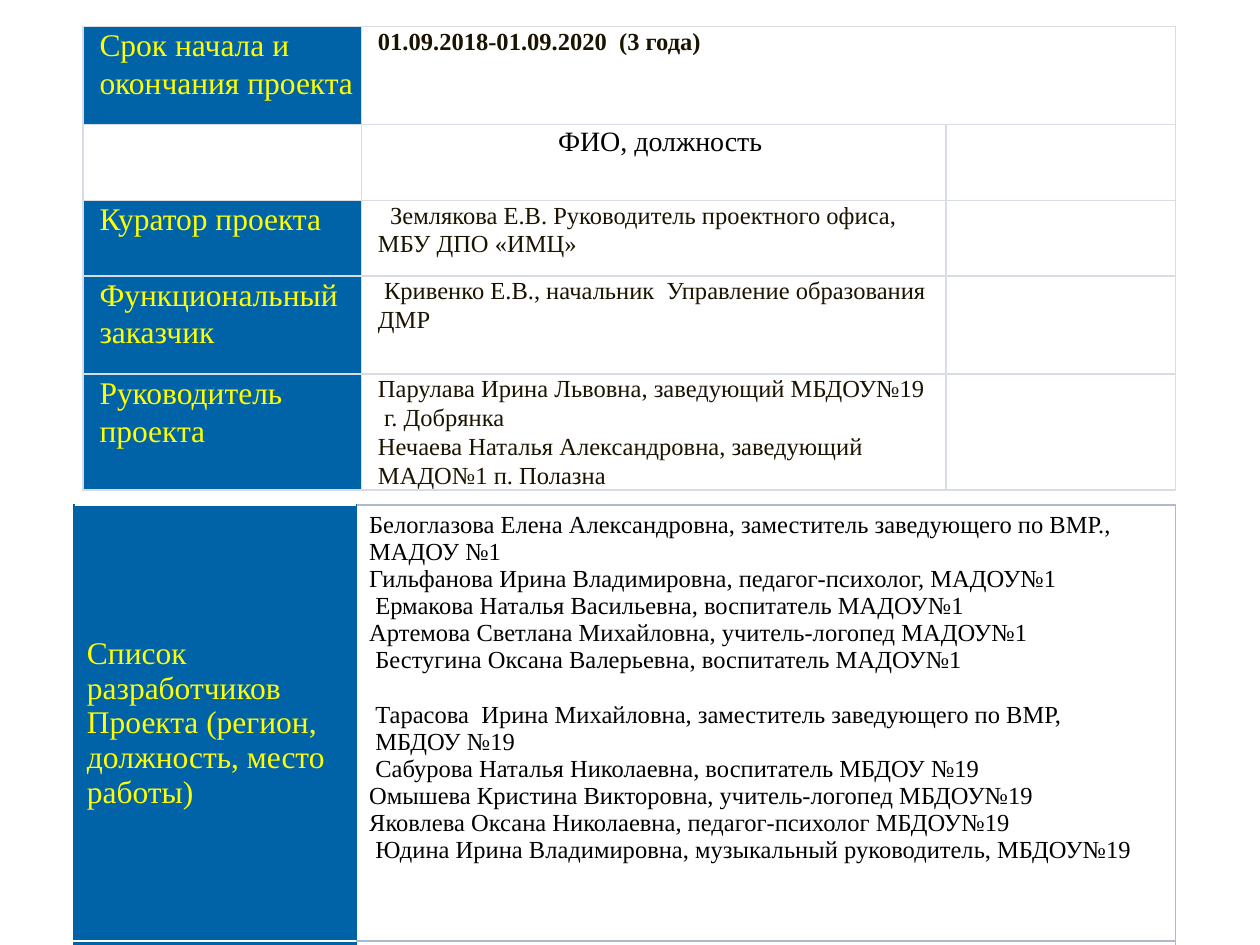
"""Build a slide with a project passport table and a list of its developers."""
import pptx
import pptx.dml.color
import pptx.enum.text
import pptx.oxml
import pptx.oxml.ns
import pptx.util

Inches = pptx.util.Inches
FONT = "Times New Roman"
COLORS = {"blue": "0062A7", "yellow": "FFFF00", "white": "FFFFFF", "black": "000000",
          "dark": "1A1300", "grid": "D8DCE5", "line": "B0B9CB"}

PASSPORT = [
    ("Срок начала и окончания проекта", ["01.09.2018-01.09.2020  (3 года)"]),
    ("", ["ФИО, должность"]),
    ("Куратор проекта", ["  Землякова Е.В. Руководитель проектного офиса,", "МБУ ДПО «ИМЦ»"]),
    ("Функциональный заказчик", [" Кривенко Е.В., начальник  Управление образования ДМР"]),
    ("Руководитель проекта", ["Парулава Ирина Львовна, заведующий МБДОУ№19", " г. Добрянка",
                              "Нечаева Наталья Александровна, заведующий МАДО№1 п. Полазна"]),
]
TEAM_LABEL = ["Список разработчиков", "Проекта (регион,  должность, место работы)"]
TEAMS = [
    ["Белоглазова Елена Александровна, заместитель заведующего по ВМР., МАДОУ №1",
     "Гильфанова Ирина Владимировна, педагог-психолог, МАДОУ№1",
     " Ермакова Наталья Васильевна, воспитатель МАДОУ№1",
     "Артемова Светлана Михайловна, учитель-логопед МАДОУ№1",
     " Бестугина Оксана Валерьевна, воспитатель МАДОУ№1"],
    [" Тарасова  Ирина Михайловна, заместитель заведующего по ВМР,",
     " МБДОУ №19",
     " Сабурова Наталья Николаевна, воспитатель МБДОУ №19",
     "Омышева Кристина Викторовна, учитель-логопед МБДОУ№19",
     "Яковлева Оксана Николаевна, педагог-психолог МБДОУ№19",
     " Юдина Ирина Владимировна, музыкальный руководитель, МБДОУ№19"],
]

LABEL = {"size": 18, "color": "yellow"}
VALUE = {"size": 14, "color": "dark"}
PERIOD = {**VALUE, "bold": True}
HEADING = {"size": 16, "color": "black"}
MEMBER = {"size": 14, "color": "black"}
TIGHT = {"margin_left": Inches(0.03), "margin_right": Inches(0.03),
         "margin_top": 0, "margin_bottom": 0}
CENTER = pptx.enum.text.PP_ALIGN.CENTER
GRID = {side: ("grid", 1) for side in "LRTB"}
EDGE = {side: ("line", 1) for side in "RTB"} | {"L": ("blue", 1)}
TEAM_EDGE = {"L": ("blue", 1.5), "R": ("blue", 1), "T": ("white", 1.5), "B": ("white", 1.5)}


def rgb(name):
    return pptx.dml.color.RGBColor.from_string(COLORS[name])


def set_all(obj, values):
    for name, value in values.items():
        setattr(obj, name, value)


def add_table(slide, left, top, cols, rows):
    size = Inches(sum(cols)), Inches(sum(rows))
    table = slide.shapes.add_table(len(rows), len(cols), Inches(left), Inches(top), *size).table
    set_all(table, {"first_row": False, "horz_banding": False})
    for col, width in zip(table.columns, cols):
        col.width = Inches(width)
    for row, height in zip(table.rows, rows):
        row.height = Inches(height)
    return table


def style_cell(cell, fill, borders):
    cell.fill.solid()
    cell.fill.fore_color.rgb = rgb(fill)
    tcPr = cell._tc.get_or_add_tcPr()
    for i, side in enumerate("LRTB"):
        color, width = borders[side]
        tcPr.insert(i, pptx.oxml.parse_xml(
            f'<a:ln{side} {pptx.oxml.ns.nsdecls("a")} w="{pptx.util.Pt(width)}">'
            f'<a:solidFill><a:srgbClr val="{COLORS[color]}"/></a:solidFill></a:ln{side}>'))


def write(cell, lines, look, para=None, indent=None):
    tf = cell.text_frame
    for i, line in enumerate(lines):
        p = tf.paragraphs[0] if i == 0 else tf.add_paragraph()
        set_all(p, para or {})
        if indent:
            pPr = p._p.get_or_add_pPr()
            pPr.set("marL", str(Inches(indent)))
            pPr.set("indent", "0")
        r = p.add_run()
        r.text = line
        set_all(r.font, {"name": FONT, "size": pptx.util.Pt(look["size"]),
                         "bold": look.get("bold", False)})
        r.font.color.rgb = rgb(look["color"])


def add_passport(slide):
    table = add_table(slide, 0.66, 0.21, [2.21, 4.64, 1.82], [0.78, 0.6, 0.6, 0.78, 0.92])
    looks = {0: PERIOD, 1: HEADING}
    for i, (label, lines) in enumerate(PASSPORT):
        cells = [table.cell(i, j) for j in range(3)]
        for cell, fill in zip(cells, ["blue" if label else "white", "white", "white"]):
            style_cell(cell, fill, GRID)
            set_all(cell, TIGHT)
        para = {"line_spacing": 1.07}
        if label:
            write(cells[0], [label], LABEL, para, 0.1)
        else:
            para["alignment"] = CENTER
        write(cells[1], lines, looks.get(i, VALUE), para, 0.1)
    table.cell(0, 1).merge(table.cell(0, 2))


def add_team(slide):
    table = add_table(slide, 0.59, 4.01, [2.24, 6.5], [3.46, 0.61])
    for i in range(2):
        style_cell(table.cell(i, 0), "blue", TEAM_EDGE)
        style_cell(table.cell(i, 1), "white", EDGE)
    label, members = table.cell(0, 0), table.cell(0, 1)
    label.vertical_anchor = pptx.enum.text.MSO_ANCHOR.MIDDLE
    write(label, TEAM_LABEL, LABEL)
    write(members, sum(TEAMS, []), MEMBER)
    members.text_frame.paragraphs[len(TEAMS[0])].space_before = pptx.util.Pt(15.5)


def main():
    prs = pptx.Presentation()
    set_all(prs, {"slide_width": Inches(10), "slide_height": Inches(7.5)})
    slide = prs.slides.add_slide(prs.slide_layouts[6])
    add_passport(slide)
    add_team(slide)
    prs.save("out.pptx")


if __name__ == "__main__":
    main()
